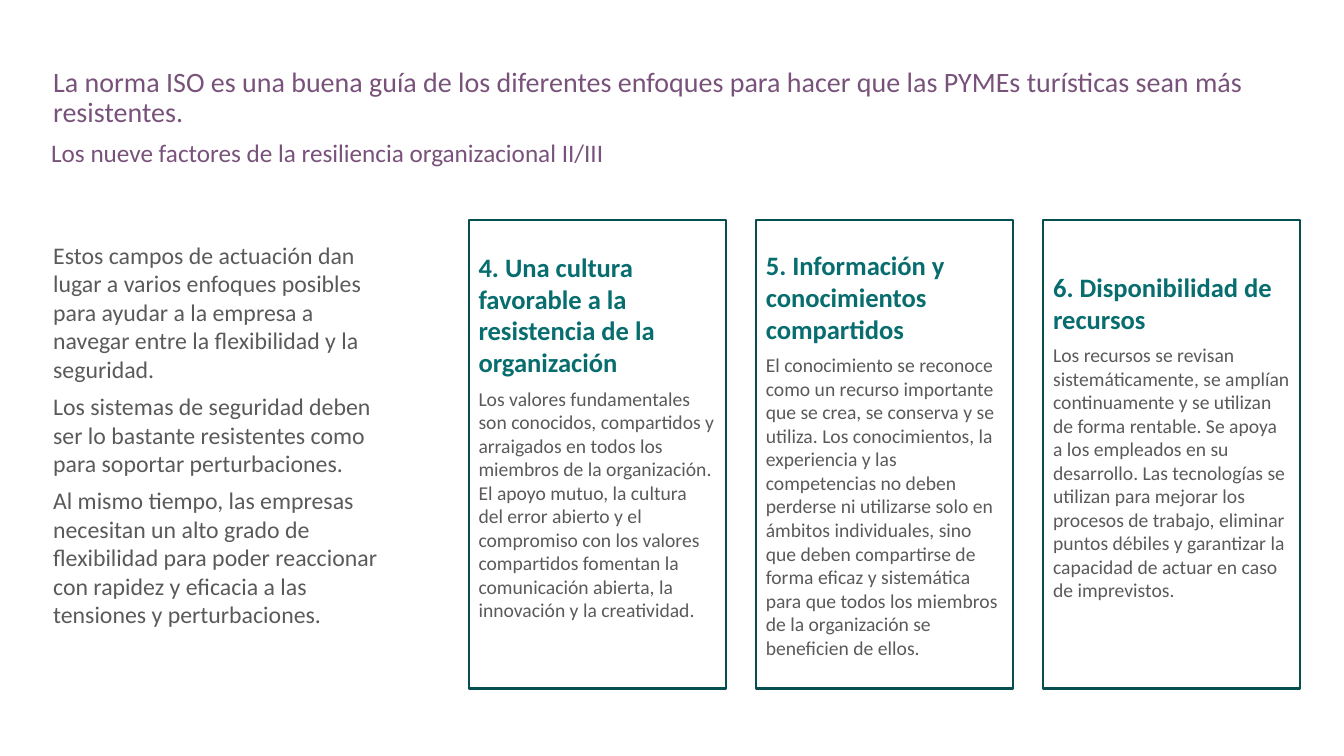
"""Build the slide on the factors of organizational resilience."""
from dataclasses import dataclass

import pptx
import pptx.dml.color
import pptx.enum.shapes
import pptx.enum.text
import pptx.shapes.autoshape
import pptx.slide
import pptx.text.text
import pptx.util

Cm = pptx.util.Cm
Anchor = pptx.enum.text.MSO_ANCHOR


@dataclass(frozen=True)
class Theme:
    font: str = "Calibri"
    plum: str = "79527B"
    teal: str = "086D6E"
    edge: str = "054F50"
    gray: str = "595A59"
    title: int = 20
    sub: int = 18
    intro: int = 17
    head: int = 19
    body: int = 14
    gap: int = 6
    line: float = 1.5


@dataclass(frozen=True)
class Para:
    text: str
    size: int
    color: str
    bold: bool = False
    lead: float = 1.0


@dataclass(frozen=True)
class Block:
    left: float
    top: float
    width: float
    height: float
    texts: tuple[Para, ...]
    anchor: Anchor = Anchor.TOP


@dataclass(frozen=True)
class Card:
    head: str
    body: str
    foot: float = 0.13


THEME = Theme()
CARD_LEFT, CARD_TOP, CARD_WIDTH, CARD_HEIGHT, CARD_STEP = 11.81, 5.54, 6.48, 11.81, 7.24

INTRO = (
    "Estos campos de actuación dan lugar a varios enfoques posibles para ayudar a la empresa "
    "a navegar entre la flexibilidad y la seguridad.",
    "Los sistemas de seguridad deben ser lo bastante resistentes como para soportar perturbaciones.",
    "Al mismo tiempo, las empresas necesitan un alto grado de flexibilidad para poder reaccionar "
    "con rapidez y eficacia a las tensiones y perturbaciones.",
)
BLOCKS = (
    Block(1.09, 4.55, 8.86, 12.8,
          tuple(Para(text, THEME.intro, THEME.gray) for text in INTRO), Anchor.MIDDLE),
    Block(1.09, 1.6, 31.85, 1.63, (Para(
        "La norma ISO es una buena guía de los diferentes enfoques para hacer que las PYMEs "
        "turísticas sean más resistentes.", THEME.title, THEME.plum, lead=0.9),)),
    Block(1.04, 3.43, 31.9, 0.71, (Para(
        "Los nueve factores de la resiliencia organizacional II/III",
        THEME.sub, THEME.plum, lead=0.9),)),
)
CARDS = (
    Card("4. Una cultura favorable a la resistencia de la organización",
         "Los valores fundamentales son conocidos, compartidos y arraigados en todos los miembros "
         "de la organización. El apoyo mutuo, la cultura del error abierto y el compromiso con los "
         "valores compartidos fomentan la comunicación abierta, la innovación y la creatividad.",
         foot=1.03),
    Card("5. Información y conocimientos compartidos",
         "El conocimiento se reconoce como un recurso importante que se crea, se conserva y se "
         "utiliza. Los conocimientos, la experiencia y las competencias no deben perderse ni "
         "utilizarse solo en ámbitos individuales, sino que deben compartirse de forma eficaz y "
         "sistemática para que todos los miembros de la organización se beneficien de ellos."),
    Card("6. Disponibilidad de recursos",
         "Los recursos se revisan sistemáticamente, se amplían continuamente y se utilizan de forma "
         "rentable. Se apoya a los empleados en su desarrollo. Las tecnologías se utilizan para "
         "mejorar los procesos de trabajo, eliminar puntos débiles y garantizar la capacidad de "
         "actuar en caso de imprevistos.",
         foot=1.03),
)


def tint(code: str) -> pptx.dml.color.RGBColor:
    """Turn a hex code into a colour."""
    return pptx.dml.color.RGBColor.from_string(code)


def write(frame: pptx.text.text.TextFrame, texts: tuple[Para, ...], anchor: Anchor) -> None:
    """Fill a text frame paragraph by paragraph."""
    frame.word_wrap = True
    frame.vertical_anchor = anchor
    for rank, item in enumerate(texts):
        para = frame.add_paragraph() if rank else frame.paragraphs[0]
        para.alignment = pptx.enum.text.PP_ALIGN.LEFT
        para.line_spacing = item.lead
        if rank:
            para.space_before = pptx.util.Pt(THEME.gap)
        run = para.add_run()
        run.text = item.text
        run.font.name = THEME.font
        run.font.size = pptx.util.Pt(item.size)
        run.font.bold = item.bold
        run.font.color.rgb = tint(item.color)


def draw_block(slide: pptx.slide.Slide, block: Block) -> None:
    """Draw a plain text block."""
    box = slide.shapes.add_textbox(
        Cm(block.left), Cm(block.top), Cm(block.width), Cm(block.height))
    write(box.text_frame, block.texts, block.anchor)


def draw_card(slide: pptx.slide.Slide, card: Card, rank: int) -> None:
    """Draw a framed card at its place in the row."""
    shape: pptx.shapes.autoshape.Shape = slide.shapes.add_shape(
        pptx.enum.shapes.MSO_SHAPE.RECTANGLE, Cm(CARD_LEFT + rank * CARD_STEP),
        Cm(CARD_TOP), Cm(CARD_WIDTH), Cm(CARD_HEIGHT))
    shape.shadow.inherit = False
    shape.fill.background()
    shape.line.color.rgb = tint(THEME.edge)
    shape.line.width = pptx.util.Pt(THEME.line)
    shape.text_frame.margin_bottom = Cm(card.foot)
    texts = (Para(card.head, THEME.head, THEME.teal, bold=True),
             Para(card.body, THEME.body, THEME.gray))
    write(shape.text_frame, texts, Anchor.MIDDLE)


def main() -> None:
    """Build and save the slide."""
    deck = pptx.Presentation()
    deck.slide_width, deck.slide_height = Cm(33.87), Cm(19.05)
    slide = deck.slides.add_slide(deck.slide_layouts[6])
    for block in BLOCKS:
        draw_block(slide, block)
    for rank, card in enumerate(CARDS):
        draw_card(slide, card, rank)
    deck.save("out.pptx")


if __name__ == "__main__":
    main()
